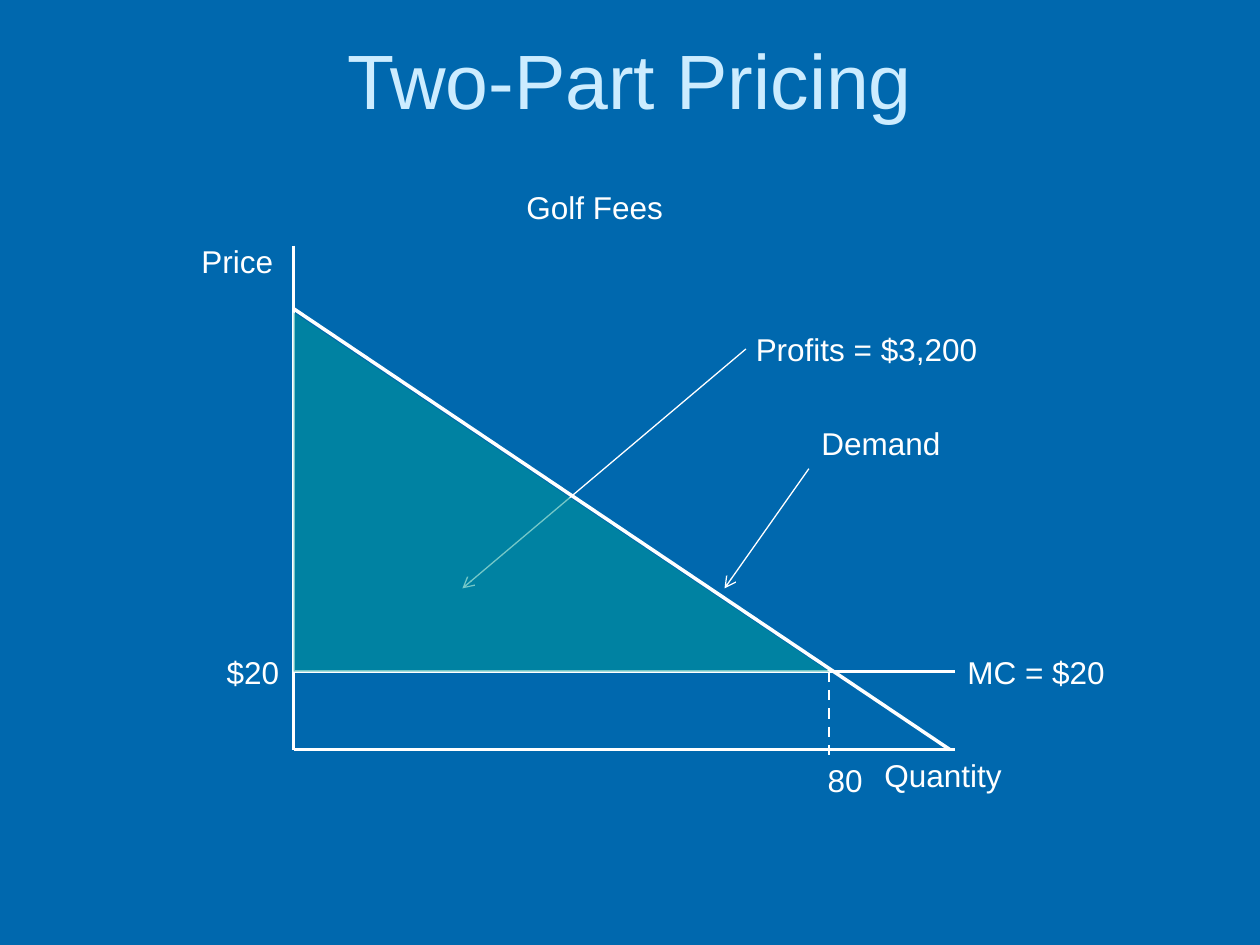
from lxml import etree
from pptx import Presentation
from pptx.dml.color import RGBColor
from pptx.enum import dml, shapes, text
from pptx.oxml.ns import qn
from pptx.util import Inches, Pt


def rgb(code):
    return RGBColor.from_string(code)


def write(frame, words, size=18, color="FFFFFF", font="Arial",
          align=text.PP_ALIGN.LEFT, anchor=text.MSO_ANCHOR.TOP):
    frame.word_wrap = True
    frame.vertical_anchor = anchor
    par = frame.paragraphs[0]
    par.alignment = align
    run = par.add_run()
    run.text = words
    run.font.size = Pt(size)
    run.font.name = font
    run.font.color.rgb = rgb(color)


class Graph:
    """Holds the colours and the slide that the parts are drawn on."""
    back, ink, head, area = "0068AE", "FFFFFF", "CCECFF", "009999"

    def __init__(self, deck):
        self.slide = deck.slides.add_slide(deck.slide_layouts[5])
        fill = self.slide.background.fill
        fill.solid()
        fill.fore_color.rgb = rgb(self.back)

    def title(self, words):
        box = self.slide.shapes.title
        box.left, box.top = Inches(0.5), Inches(0)
        box.width, box.height = Inches(9), Inches(1.25)
        write(box.text_frame, words, size=44, color=self.head,
              align=text.PP_ALIGN.CENTER, anchor=text.MSO_ANCHOR.MIDDLE)

    def label(self, words, left, top, width):
        box = self.slide.shapes.add_textbox(
            Inches(left), Inches(top), Inches(width), Inches(0.4))
        write(box.text_frame, words, color=self.ink)

    def line(self, start, end, width=2, dash=False, arrow=False):
        ends = [Inches(n) for n in (*start, *end)]
        rule = self.slide.shapes.add_connector(
            shapes.MSO_CONNECTOR.STRAIGHT, *ends)
        rule.line.color.rgb = rgb(self.ink)
        rule.line.width = Pt(width)
        if dash:
            rule.line.dash_style = dml.MSO_LINE.DASH
        if arrow:
            tail = etree.SubElement(rule.line._get_or_add_ln(), qn("a:tailEnd"))
            tail.set("type", "arrow")
        etree.SubElement(rule._element.spPr, qn("a:effectLst"))

    def wedge(self, left, top, right, base, alpha):
        """Draw a see-through right triangle; alpha is in percent."""
        shape = self.slide.shapes.add_shape(
            shapes.MSO_SHAPE.RIGHT_TRIANGLE, Inches(left), Inches(top),
            Inches(right - left), Inches(base - top))
        shape.shadow.inherit = False
        shape.line.fill.background()
        shape.fill.solid()
        shape.fill.fore_color.rgb = rgb(self.area)
        color = shape._element.spPr.find(qn("a:solidFill"))[0]
        etree.SubElement(color, qn("a:alpha")).set("val", str(alpha * 1000))


def main():
    deck = Presentation()
    deck.slide_width, deck.slide_height = Inches(10), Inches(7.5)
    graph = Graph(deck)
    graph.title("Two-Part Pricing")

    left, right, base = 2.33, 7.58, 5.95
    cost, sold = 5.33, 6.58
    graph.line((left, 1.95), (left, base))
    graph.line((right, base), (left, base))
    graph.line((left, 2.45), (7.54, base))
    graph.line((sold, cost), (sold, 5.99), width=1.5, dash=True)
    graph.line((right, cost), (left, cost))

    for words, x, y, width in (
            ("Golf Fees", 4.08, 1.44, 1.83),
            ("Price", 1.5, 1.87, 1.08),
            ("Quantity", 6.92, base, 1.25),
            ("Demand", 6.42, 3.32, 1.42),
            ("$20", 1.7, cost - 0.2, 0.74),
            ("80", 6.47, 5.99, 0.61),
            ("MC = $20", right, cost - 0.2, 1.33),
            ("Profits = $3,200", 5.9, 2.57, 2.27)):
        graph.label(words, x, y, width)

    graph.line((6.42, 3.72), (5.75, 4.67), width=0.75, arrow=True)
    graph.line((5.92, 2.77), (3.67, 4.67), width=0.75, arrow=True)
    graph.wedge(left, 2.48, sold, cost, alpha=54)
    deck.save("out.pptx")


if __name__ == "__main__":
    main()
